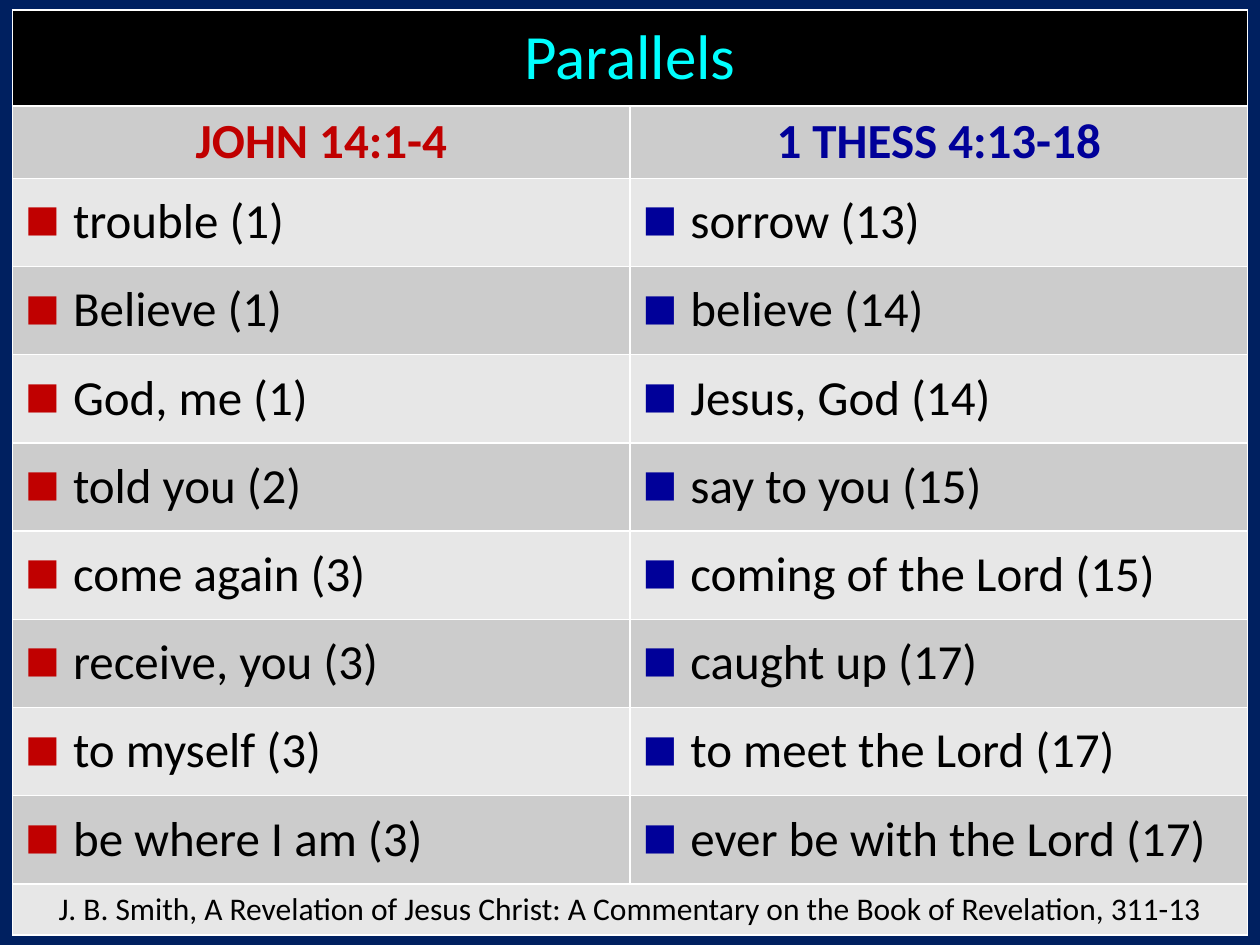
from lxml.etree import SubElement
from pptx import Presentation
from pptx.dml.color import RGBColor
from pptx.enum.text import MSO_ANCHOR, PP_ALIGN
from pptx.oxml.ns import qn
from pptx.util import Inches, Pt

COLORS = {
    "background": "002060",
    "title_fill": "000000",
    "title": "00FFFF",
    "text": "000000",
    "john": "C00000",
    "thess": "000099",
    "dark_band": "CCCCCC",
    "light_band": "E7E7E7",
}
TITLE = "Parallels"
HEADINGS = ("JOHN 14:1-4", "1 THESS 4:13-18")
PARALLELS = [
    ("trouble (1)", "sorrow (13)"),
    ("Believe (1)", "believe (14)"),
    ("God, me (1)", "Jesus, God (14)"),
    ("told you (2)", "say to you (15)"),
    ("come again (3)", "coming of the Lord (15)"),
    ("receive, you (3)", "caught up (17)"),
    ("to myself (3)", "to meet the Lord (17)"),
    ("be where I am (3)", "ever be with the Lord (17)"),
]
SOURCE = ("J. B. Smith, A Revelation of Jesus Christ: "
          "A Commentary on the Book of Revelation, 311-13")
COLUMN_COLORS = ("john", "thess")
ROW_HEIGHTS = [0.76, 0.57] + [0.7] * len(PARALLELS) + [0.4]
INDENT = Inches(0.38)


def fill_cell(cell, text, size, color, fill, bold=False):
    cell.fill.solid()
    cell.fill.fore_color.rgb = RGBColor.from_string(COLORS[fill])
    cell.vertical_anchor = MSO_ANCHOR.MIDDLE
    cell.text = text
    paragraph = cell.text_frame.paragraphs[0]
    paragraph.alignment = PP_ALIGN.CENTER
    font = paragraph.font
    font.name, font.size, font.bold = "Calibri", Pt(size), bold
    font.color.rgb = RGBColor.from_string(COLORS[color])
    # Table styles override paragraph defaults, so the run carries them too.
    run_font = paragraph.runs[0].font
    run_font.name, run_font.size, run_font.bold = "Calibri", Pt(size), bold
    run_font.color.rgb = RGBColor.from_string(COLORS[color])
    return paragraph


def add_bullet(paragraph, color):
    paragraph.alignment = PP_ALIGN.LEFT
    paragraph.line_spacing = 0.9
    properties = paragraph._p.get_or_add_pPr()
    properties.set("marL", str(INDENT))
    properties.set("indent", str(-INDENT))
    # The schema wants spacing and bullet elements ahead of the font defaults.
    defaults = properties.find(qn("a:defRPr"))
    properties.remove(defaults)
    spacing = SubElement(properties, qn("a:spcBef"))
    SubElement(spacing, qn("a:spcPct"), val="20000")
    bullet_color = SubElement(properties, qn("a:buClr"))
    SubElement(bullet_color, qn("a:srgbClr"), val=COLORS[color])
    SubElement(properties, qn("a:buSzPct"), val="75000")
    SubElement(properties, qn("a:buFont"), typeface="Calibri")
    SubElement(properties, qn("a:buChar"), char="■")
    properties.append(defaults)


presentation = Presentation()
presentation.slide_width, presentation.slide_height = Inches(10), Inches(7.5)
slide = presentation.slides.add_slide(presentation.slide_layouts[6])
slide.background.fill.solid()
slide.background.fill.fore_color.rgb = RGBColor.from_string(COLORS["background"])

# The default table style draws the white grid and the thick rule below the title.
table = slide.shapes.add_table(
    len(ROW_HEIGHTS), len(HEADINGS), Inches(0.1), Inches(0.08),
    Inches(9.8), Inches(sum(ROW_HEIGHTS))).table
for row, height in zip(table.rows, ROW_HEIGHTS):
    row.height = Inches(height)

last_row = len(ROW_HEIGHTS) - 1
for row_index in (0, last_row):
    table.cell(row_index, 0).merge(table.cell(row_index, 1))
fill_cell(table.cell(0, 0), TITLE, 36, "title", "title_fill")
fill_cell(table.cell(last_row, 0), SOURCE, 18, "text", "light_band")

for column, (heading, color) in enumerate(zip(HEADINGS, COLUMN_COLORS)):
    fill_cell(table.cell(1, column), heading, 28, color, "dark_band", bold=True)
    for row_index, pair in enumerate(PARALLELS, start=2):
        band = "dark_band" if row_index % 2 else "light_band"
        paragraph = fill_cell(table.cell(row_index, column), pair[column], 28, "text", band)
        add_bullet(paragraph, color)

presentation.save("out.pptx")
